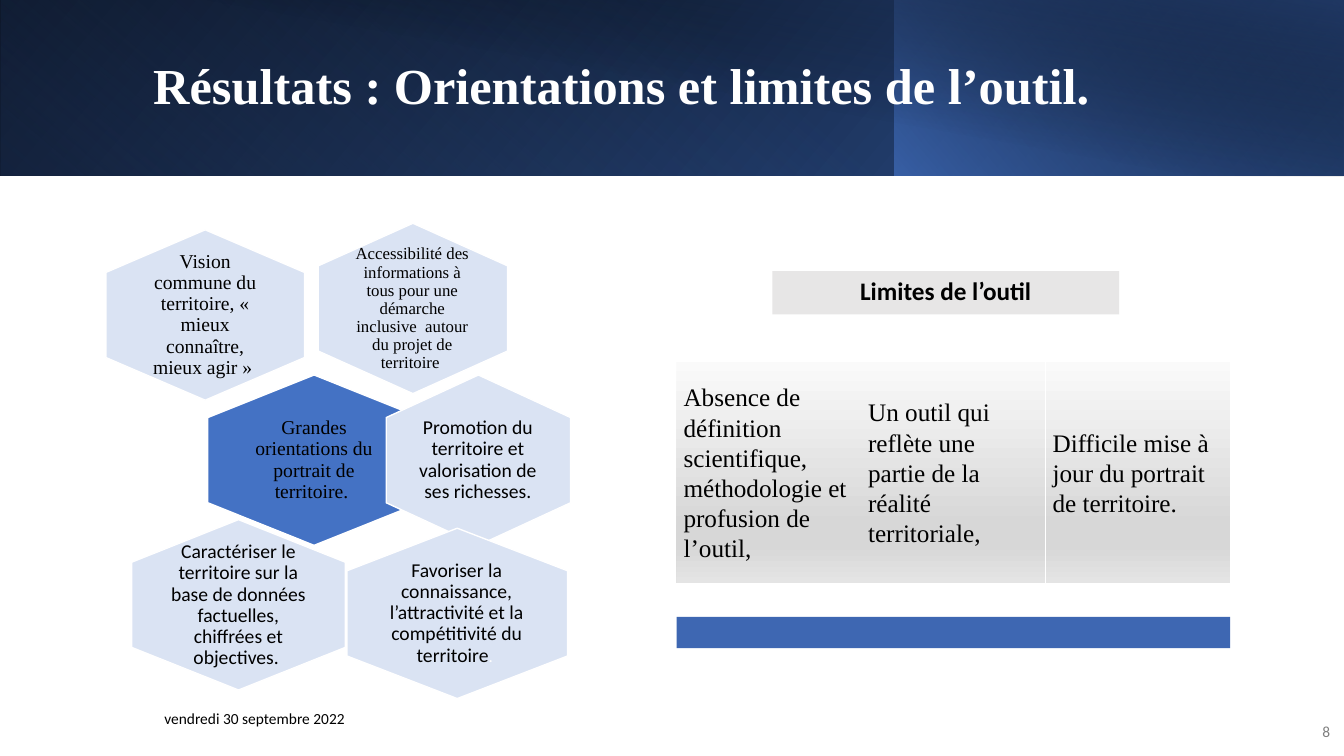
from pptx import Presentation
from pptx.dml.color import RGBColor
from pptx.enum.shapes import MSO_SHAPE
from pptx.enum.text import MSO_ANCHOR, PP_ALIGN
from pptx.oxml import parse_xml
from pptx.oxml.ns import nsdecls, qn
from pptx.util import Pt

PX = 9144  # EMU per px, 100 px to the inch

THEME = {
    "serif": "Times New Roman", "sans": "Calibri",
    "white": "FFFFFF", "black": "000000", "grey": "808080",
    "blue": "4472C4", "bar": "3E67B2", "pale": "DAE3F3",
    "deep": "2F5597", "navy": "203864", "heading": "E7E6E6",
    "title": 36, "limit": 18, "orientation": 14, "small": 12, "footer": 11,
}
LIMIT_GRADIENT = ([(0, "FAFAFA", 100), (74, "D7D7D7", 100),
                   (83, "D7D7D7", 100), (100, "E4E4E4", 100)], 90)


def add_block(shapes, preset, box, fill):
    """Add an unlined shape; fill is a colour or (stops of position, colour, alpha; angle)."""
    block = shapes.add_shape(preset, *(PX * n for n in box))
    block.shadow.inherit = False
    block.line.fill.background()
    if isinstance(fill, str):
        block.fill.solid()
        block.fill.fore_color.rgb = RGBColor.from_string(fill)
    else:
        stops, angle = fill
        stop_xml = "".join(
            f'<a:gs pos="{pos * 1000}"><a:srgbClr val="{colour}">'
            f'<a:alpha val="{alpha * 1000}"/></a:srgbClr></a:gs>'
            for pos, colour, alpha in stops)
        block.fill.background()
        properties = block.element.spPr
        properties.replace(properties.find(qn("a:noFill")), parse_xml(
            f'<a:gradFill rotWithShape="1" {nsdecls("a")}><a:gsLst>{stop_xml}</a:gsLst>'
            f'<a:lin ang="{angle * 60000}" scaled="0"/></a:gradFill>'))
    return block


def write(frame, runs, align, margins=(10, 5), spacing=None):
    """Fill a frame with one paragraph of (text, size, font, colour, bold) runs."""
    frame.word_wrap = True
    frame.vertical_anchor = MSO_ANCHOR.MIDDLE
    frame.margin_left = frame.margin_right = PX * margins[0]
    frame.margin_top = frame.margin_bottom = PX * margins[1]
    paragraph = frame.paragraphs[0]
    paragraph.alignment = align
    paragraph.line_spacing = spacing
    for text, size, font, colour, bold in runs:
        run = paragraph.add_run()
        run.text = text
        run.font.size = Pt(THEME[size])
        run.font.name = THEME[font]
        run.font.bold = bold
        run.font.color.rgb = RGBColor.from_string(THEME[colour])


deck = Presentation()
deck.slide_width, deck.slide_height = PX * 1333, PX * 750
slide = deck.slides.add_slide(deck.slide_layouts[5])

# Header band
header_layers = [
    ((0, 0, 1333, 174), 0, True,
     ([(0, THEME["black"], 100), (100, THEME["deep"], 100)], 140)),
    ((0, 0, 888, 174), 180, True,
     ([(20, THEME["blue"], 0), (100, THEME["navy"], 55)], 230)),
    ((887, 0, 446, 174), 0, True,
     ([(0, THEME["blue"], 66), (100, THEME["black"], 30)], 220)),
    ((50, 0, 1283, 175), 0, False,
     ([(50, THEME["black"], 0), (99, THEME["navy"], 52)], 280)),
]
for box, rotation, flipped, gradient in header_layers:
    layer = add_block(slide.shapes, MSO_SHAPE.RECTANGLE, box, gradient)
    layer.rotation = rotation
    if flipped:
        layer.element.spPr.find(qn("a:xfrm")).set("flipH", "1")

title = slide.shapes.title
title.element.getparent().append(title.element)  # bring in front of the band
title.left, title.top, title.width, title.height = (PX * n for n in (52, 52, 1129, 70))
write(title.text_frame,
      [("Résultats : Orientations et limites de l’outil.", "title", "serif", "white", True)],
      PP_ALIGN.CENTER, spacing=0.9)

# Date and slide number
for text, box, colour in [
    ("vendredi 30 septembre 2022", (52, 693, 300, 40), "black"),
    ("8", (1280, 706, 49, 40), "grey"),
]:
    footer = slide.shapes.add_textbox(*(PX * n for n in box))
    write(footer.text_frame, [(text, "footer", "sans", colour, False)], PP_ALIGN.RIGHT)

# Orientations: pointed hexagons, each with its text on the same centre
HEX_HEIGHT, TEXT_HEIGHT = 169, 113
orientations = [  # centre x, centre y, hexagon width, text width, margin, fill, runs
    (409, 306, 188, 126, 5, "pale", [
        ("Accessibilité des informations à tous pour une démarche inclusive  autour "
         "du projet de territoire ", "small", "serif", "black", False)]),
    (203, 312, 197, 131, 0, "pale", [
        ("Vision commune du territoire, « mieux connaître, mieux agir » ",
         "orientation", "serif", "black", False)]),
    (311, 456, 211, 141, 6, "blue", [
        ("Grandes orientations du portrait de territoire. ",
         "orientation", "serif", "black", False)]),
    (474, 456, 183, 122, 0, "pale", [
        ("Promotion du territoire et valorisation de ses richesses.",
         "orientation", "sans", "black", False)]),
    (453, 608, 219, 146, 6, "pale", [
        ("Favoriser la connaissance, l’attractivité et la compétitivité du territoire",
         "orientation", "sans", "black", False),
        (". ", "small", "sans", "white", False)]),
    (236, 600, 212, 141, 0, "pale", [
        ("Caractériser le territoire sur la base de données factuelles, chiffrées "
         "et objectives. ", "orientation", "sans", "black", False)]),
]
honeycomb = slide.shapes.add_group_shape().shapes
for x, y, width, text_width, margin, fill, runs in orientations:
    cell = add_block(honeycomb, MSO_SHAPE.HEXAGON,
                     (x - HEX_HEIGHT // 2, y - width // 2, HEX_HEIGHT, width), THEME[fill])
    cell.rotation = 90
    cell.line.color.rgb = RGBColor.from_string(THEME["white"])
    cell.line.width = Pt(1)
    label = honeycomb.add_textbox(*(PX * n for n in (
        x - text_width // 2, y - TEXT_HEIGHT // 2, text_width, TEXT_HEIGHT)))
    write(label.text_frame, runs, PP_ALIGN.CENTER, (margin, margin), 0.9)

# Limits: heading, three adjoining columns, closing bar
LIMITS_LEFT, COLUMN_WIDTH = 671, 183
limits = [
    "Absence de définition scientifique, méthodologie et profusion de l’outil,",
    "Un outil qui reflète une partie de la réalité territoriale,",
    "Difficile mise à jour du portrait de territoire.",
]
panel = slide.shapes.add_group_shape().shapes
heading = add_block(panel, MSO_SHAPE.RECTANGLE, (766, 269, 344, 43), THEME["heading"])
write(heading.text_frame, [("Limites de l’outil", "limit", "sans", "black", True)],
      PP_ALIGN.CENTER, (7, 7), 0.9)
for index, limit in enumerate(limits):
    column = add_block(panel, MSO_SHAPE.RECTANGLE,
                       (LIMITS_LEFT + index * COLUMN_WIDTH, 359, COLUMN_WIDTH, 219),
                       LIMIT_GRADIENT)
    write(column.text_frame, [(limit, "limit", "serif", "black", False)],
          PP_ALIGN.LEFT, (7, 7))
add_block(panel, MSO_SHAPE.RECTANGLE,
          (LIMITS_LEFT, 612, len(limits) * COLUMN_WIDTH, 31), THEME["bar"])

deck.save("out.pptx")
